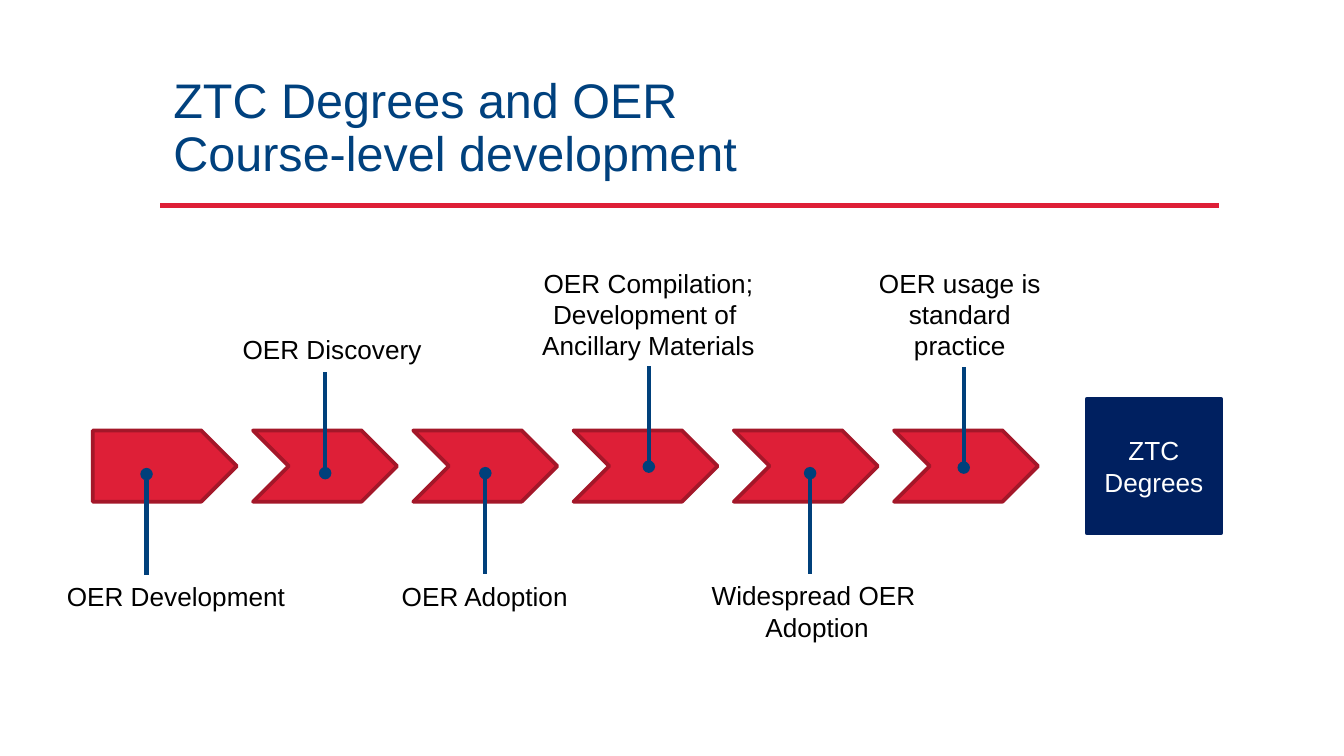
from lxml import etree
from pptx import Presentation
from pptx import util as u
from pptx.dml.color import RGBColor
from pptx.enum import shapes, text
from pptx.oxml.ns import qn

# Content: lengths in points
TITLE = ["ZTC Degrees and OER", "Course-level development"]
GOAL = "ZTC Degrees"
UP, DOWN = -1, 1
# paragraphs, pin x, pin y, direction, label centre, label top, label width, wrap
STAGES = [
    (["OER Development"], 78.5, 254, DOWN, 94.3, 307.5, 132.5, False),
    (["OER Discovery"], 174.2, 253.5, UP, 177.9, 175, 111, False),
    (["OER Adoption"], 260, 253.5, DOWN, 259.7, 307.5, 105, False),
    (["OER Compilation;", "Development of ", "Ancillary Materials"],
     347.6, 250, UP, 347.4, 139.5, 129, False),
    (["Widespread OER ", "Adoption"], 434, 253.5, DOWN, 437.8, 307, 128, False),
    (["OER usage is standard", "practice"], 516.3, 250.5, UP, 514.2, 139.5, 118, True),
]


class Theme:
    font = "Arial"
    title_size, body_size = 26, 14
    title, pin, navy = "00417E", "00407B", "002060"
    red, dark_red = "DE1F37", "A41729"
    black, white = "000000", "FFFFFF"


ARROW_LEFT, ARROW_TOP, ARROW_STEP = 49.7, 230.6, 85.85
ARROW_WIDTH, ARROW_HEIGHT = 77.2, 38.2
PIN_LENGTH = 54


def color(code):
    return RGBColor.from_string(code)


def add_span(para, words, size, code):
    span = para.add_run()
    span.text = words
    span.font.name = Theme.font
    span.font.size = u.Pt(size)
    span.font.color.rgb = color(code)


def add_shape(page, kind, left, top, width, height, fill, line):
    shape = page.shapes.add_shape(kind, *map(u.Pt, (left, top, width, height)))
    shape.shadow.inherit = False
    shape.fill.solid()
    shape.fill.fore_color.rgb = color(fill)
    shape.line.color.rgb = color(line)
    shape.line.width = u.Pt(2)
    return shape


def add_line(page, start, end, code, width, dot=False):
    line = page.shapes.add_connector(
        shapes.MSO_CONNECTOR.STRAIGHT, *map(u.Pt, start + end))
    line.line.color.rgb = color(code)
    line.line.width = u.Pt(width)
    properties = line._element.spPr
    if dot:
        etree.SubElement(properties.find(qn("a:ln")), qn("a:headEnd"), type="oval")
    etree.SubElement(properties, qn("a:effectLst"))


def add_label(page, paragraphs, center, top, width, wrap):
    height = 7.2 + 16.9 * len(paragraphs)
    box = page.shapes.add_textbox(*map(u.Pt, (center - width / 2, top, width, height)))
    frame = box.text_frame
    frame.word_wrap = wrap
    for index, words in enumerate(paragraphs):
        para = frame.add_paragraph() if index else frame.paragraphs[0]
        para.alignment = text.PP_ALIGN.CENTER
        add_span(para, words, Theme.body_size, Theme.black)


def main():
    deck = Presentation()
    deck.slide_width, deck.slide_height = u.Pt(720), u.Pt(405)
    page = deck.slides.add_slide(deck.slide_layouts[6])

    # Title and rule
    add_line(page, (85.8, 110), (653, 110), Theme.red, 2.5)
    box = page.shapes.add_textbox(*map(u.Pt, (85.8, 47.5, 567.2, 53.3)))
    box.text_frame.word_wrap = True
    box.text_frame.vertical_anchor = text.MSO_ANCHOR.BOTTOM
    para = box.text_frame.paragraphs[0]
    para.line_spacing = 0.9
    for index, words in enumerate(TITLE):
        if index:
            para.add_line_break()
        add_span(para, words, Theme.title_size, Theme.title)

    # Chain of arrows
    for index in range(len(STAGES)):
        kind = shapes.MSO_SHAPE.CHEVRON if index else shapes.MSO_SHAPE.PENTAGON
        add_shape(page, kind, ARROW_LEFT + index * ARROW_STEP, ARROW_TOP,
                  ARROW_WIDTH, ARROW_HEIGHT, Theme.red, Theme.dark_red)

    # Goal square
    goal = add_shape(page, shapes.MSO_SHAPE.RECTANGLE, 582.2, 213.7, 72, 72,
                     Theme.navy, Theme.navy)
    goal.text_frame.word_wrap = True
    goal.text_frame.vertical_anchor = text.MSO_ANCHOR.MIDDLE
    para = goal.text_frame.paragraphs[0]
    para.alignment = text.PP_ALIGN.CENTER
    add_span(para, GOAL, Theme.body_size, Theme.white)

    # Pins and stage labels
    for paragraphs, x, y, direction, center, top, width, wrap in STAGES:
        add_line(page, (x, y), (x, y + direction * PIN_LENGTH), Theme.pin, 2.25, dot=True)
        add_label(page, paragraphs, center, top, width, wrap)

    deck.save("out.pptx")


if __name__ == "__main__":
    main()
